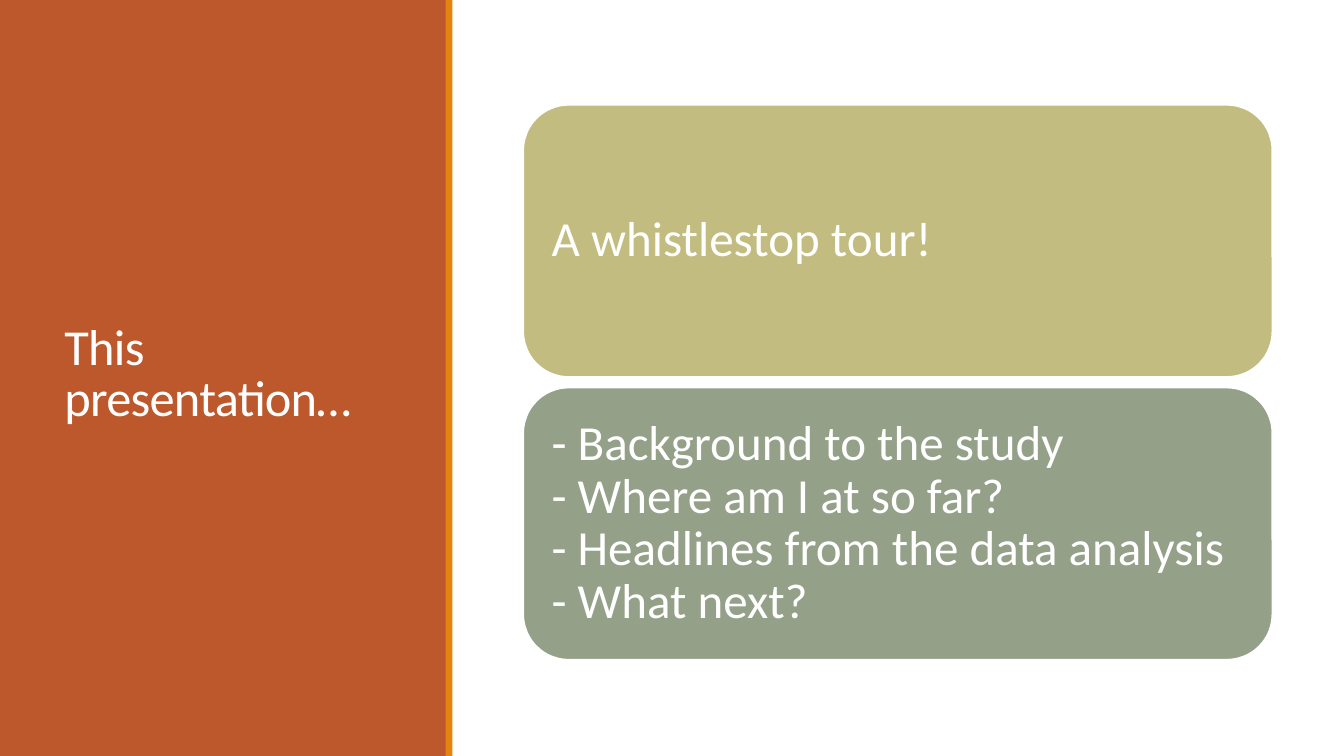
from pptx import Presentation
from pptx.dml.color import RGBColor
from pptx.enum.shapes import MSO_SHAPE
from pptx.enum.text import MSO_ANCHOR, PP_ALIGN
from pptx.util import Inches, Pt

theme = {
    "font": "Calibri", "title": 36, "body": 35,
    "white": "FFFFFF", "rust": "BD582C", "amber": "E48312",
    "sand": "C2BC80", "sage": "94A088",
}

deck = Presentation()
deck.slide_width, deck.slide_height = Inches(13.33), Inches(7.5)
slide = deck.slides.add_slide(deck.slide_layouts[6])
col, row = deck.slide_width / 100, deck.slide_height / 100


def add_block(kind, x, y, w, h, fill):
    block = slide.shapes.add_shape(
        kind, int(x * col), int(y * row), int(w * col), int(h * row))
    block.shadow.inherit = False
    block.fill.solid()
    block.fill.fore_color.rgb = RGBColor.from_string(theme[fill])
    block.line.fill.background()
    return block


def set_text(frame, text, size, space):
    frame.word_wrap = True
    frame.vertical_anchor = MSO_ANCHOR.MIDDLE
    para = frame.paragraphs[0]
    para.text = text
    para.alignment = PP_ALIGN.LEFT
    para.line_spacing = space
    para.font.name = theme["font"]
    para.font.size = Pt(theme[size])
    para.font.color.rgb = RGBColor.from_string(theme["white"])
    return para


add_block(MSO_SHAPE.RECTANGLE, 0, 0, 33.23, 100, "rust")
add_block(MSO_SHAPE.RECTANGLE, 33.16, 0, 0.5, 100, "amber")

title = slide.shapes.add_textbox(
    int(4.05 * col), int(7.6 * row), int(25.28 * col), int(84.13 * row))
para = set_text(title.text_frame, "This presentation…", "title", 0.85)
para.runs[0]._r.get_or_add_rPr().set("spc", "-50")

points = [
    "Background to the study",
    "Where am I at so far?",
    "Headlines from the data analysis",
    "What next?",
]
cards = [
    ("A whistlestop tour!", "sand"),
    ("\v".join(f"- {point}" for point in points), "sage"),
]
top, high, gap = 13.87, 36, 1.4
for i, (text, fill) in enumerate(cards):
    card = add_block(MSO_SHAPE.ROUNDED_RECTANGLE,
                     38.93, top + i * (high + gap), 55.74, high, fill)
    card.line.color.rgb = RGBColor.from_string(theme["white"])
    card.line.width = Pt(1.25)
    frame = card.text_frame
    frame.margin_left = frame.margin_right = Inches(0.15)
    frame.margin_top = frame.margin_bottom = Inches(0.15)
    set_text(frame, text, "body", 0.9)

deck.save("out.pptx")
